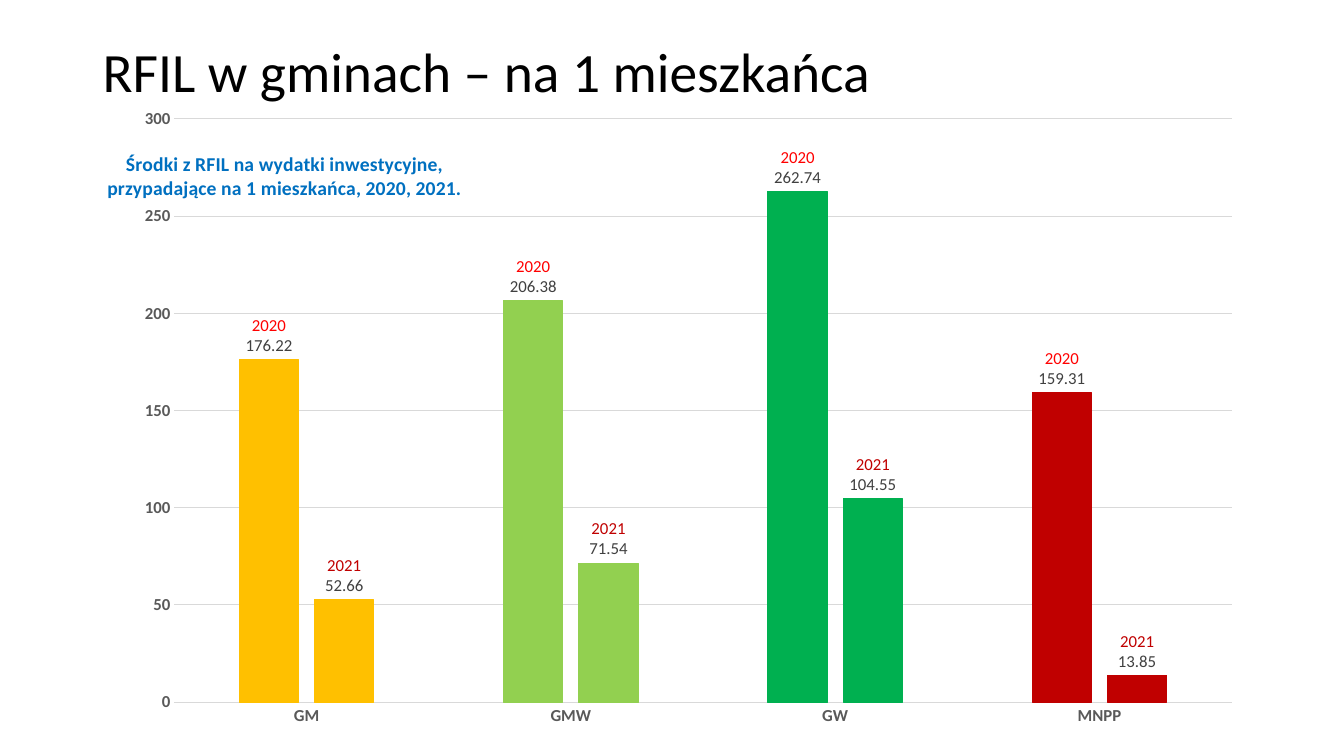
from lxml import etree
from pptx import Presentation
from pptx.chart.data import CategoryChartData
from pptx.dml.color import RGBColor
from pptx.enum.chart import XL_CHART_TYPE, XL_LABEL_POSITION, XL_TICK_MARK
from pptx.enum.dml import MSO_FILL
from pptx.enum.text import MSO_ANCHOR, PP_ALIGN
from pptx.oxml.ns import qn
from pptx.util import Inches, Pt

COLUMNS = XL_CHART_TYPE.COLUMN_CLUSTERED
OUTSIDE_END = XL_LABEL_POSITION.OUTSIDE_END
NO_TICK = XL_TICK_MARK.NONE
MIDDLE = MSO_ANCHOR.MIDDLE
CENTER = PP_ALIGN.CENTER

BLACK = RGBColor(0x00, 0x00, 0x00)
GRAY = RGBColor(0x59, 0x59, 0x59)
DARK_GRAY = RGBColor(0x40, 0x40, 0x40)
GRID = RGBColor(0xD9, 0xD9, 0xD9)
BLUE = RGBColor(0x00, 0x70, 0xC0)
AMBER = RGBColor(0xFF, 0xC0, 0x00)
LIME = RGBColor(0x92, 0xD0, 0x50)
GREEN = RGBColor(0x00, 0xB0, 0x50)
DARK_RED = RGBColor(0xC0, 0x00, 0x00)
RED = RGBColor(0xFF, 0x00, 0x00)

GMINA_COLORS = {"GM": AMBER, "GMW": LIME, "GW": GREEN, "MNPP": DARK_RED}
YEAR_COLORS = {"2020": RED, "2021": DARK_RED}
RFIL = {
    "2020": (176.22, 206.38, 262.74, 159.31),
    "2021": (52.66, 71.54, 104.55, 13.85),
}
CHART_TITLE = ("Środki z RFIL na wydatki inwestycyjne,\n"
               "przypadające na 1 mieszkańca, 2020, 2021.")


def set_layout(parent, index, **values):
    """Place a chart part by fractions of the chart area."""
    old = parent.find(qn("c:layout"))
    if old is not None:
        parent.remove(old)
    layout = etree.Element(qn("c:layout"))
    parent.insert(index, layout)
    manual = etree.SubElement(layout, qn("c:manualLayout"))
    for name, value in values.items():
        etree.SubElement(manual, qn(f"c:{name}")).set("val", str(value))


class Deck:
    def __init__(self, font="Calibri"):
        self.font = font
        self.prs = Presentation()
        self.prs.slide_width = Inches(13.33)
        self.prs.slide_height = Inches(7.5)
        self.s = self.prs.slides.add_slide(self.prs.slide_layouts[6])

    def style(self, font, size, color, bold=False):
        font.name = self.font
        font.size = Pt(size)
        font.bold = bold
        font.color.rgb = color

    def title(self, text, x, y, w, h):
        box = self.s.shapes.add_textbox(Inches(x), Inches(y), Inches(w), Inches(h))
        tf = box.text_frame
        tf.word_wrap = True
        tf.vertical_anchor = MIDDLE
        tf.text = text
        p = tf.paragraphs[0]
        p.line_spacing = 0.9
        self.style(p.runs[0].font, 39.6, BLACK)

    def chart(self, x, y, w, h):
        data = CategoryChartData(number_format="#,##0.00")
        data.categories = list(GMINA_COLORS)
        for year, values in RFIL.items():
            data.add_series(year, values)
        chart = self.s.shapes.add_chart(
            COLUMNS, Inches(x), Inches(y), Inches(w), Inches(h), data).chart
        chart.has_legend = False
        self.style(chart.font, 12, BLACK)
        self.chart_title(chart)
        self.axes(chart)

        plot = chart.plots[0]
        plot.gap_width = 219
        plot.overlap = -27
        plot.vary_by_categories = False
        for series in plot.series:
            self.columns(series)
        plot_area = chart.element.find(f".//{qn('c:plotArea')}")
        set_layout(plot_area, 0, layoutTarget="inner", xMode="edge", yMode="edge",
                   x=0.071, y=0.015, w=0.919, h=0.93)

    def chart_title(self, chart):
        title = chart.chart_title
        title.text_frame.text = CHART_TITLE
        for p in title.text_frame.paragraphs:
            p.alignment = CENTER
            self.style(p.runs[0].font, 14, BLUE, bold=True)
        title.include_in_layout = True
        set_layout(title.element, 1, xMode="edge", yMode="edge", x=0.01, y=0.06)

    def axes(self, chart):
        for axis in (chart.category_axis, chart.value_axis):
            axis.major_tick_mark = axis.minor_tick_mark = NO_TICK
            self.style(axis.tick_labels.font, 12, GRAY, bold=True)
        values = chart.value_axis
        values.minimum_scale, values.maximum_scale, values.major_unit = 0, 300, 50
        values.tick_labels.number_format = "#,##0"
        values.tick_labels.number_format_is_linked = False
        values.format.line.fill.background()
        for line in (chart.category_axis.format.line, values.major_gridlines.format.line):
            line.color.rgb = GRID
            line.width = Pt(0.75)

    def columns(self, series):
        series.invert_if_negative = False
        self.paint(series.format, AMBER)
        for i, (value, color) in enumerate(zip(series.values, GMINA_COLORS.values())):
            point = series.points[i]
            self.paint(point.format, color)
            label = point.data_label
            tf = label.text_frame
            tf.text = f"{series.name}\n{value:.2f}"
            for p, text_color in zip(tf.paragraphs, (YEAR_COLORS[series.name], DARK_GRAY)):
                self.style(p.runs[0].font, 12, text_color)
            label.position = OUTSIDE_END

        labels = series.data_labels
        labels.show_value = labels.show_series_name = True
        labels.number_format = "#,##0.00"
        labels.number_format_is_linked = False
        labels.position = OUTSIDE_END
        self.style(labels.font, 12, DARK_GRAY)

    def paint(self, fmt, color):
        fmt.fill.solid()
        fmt.fill.fore_color.rgb = color
        fmt.line.color.rgb = color
        fmt.line.width = Pt(0.75)


def main():
    deck = Deck()
    deck.title("RFIL w gminach – na 1 mieszkańca", 0.92, 0.4, 11.5, 0.68)
    deck.chart(0.92, 1.08, 11.41, 6.23)
    deck.prs.save("out.pptx")


if __name__ == "__main__":
    main()
